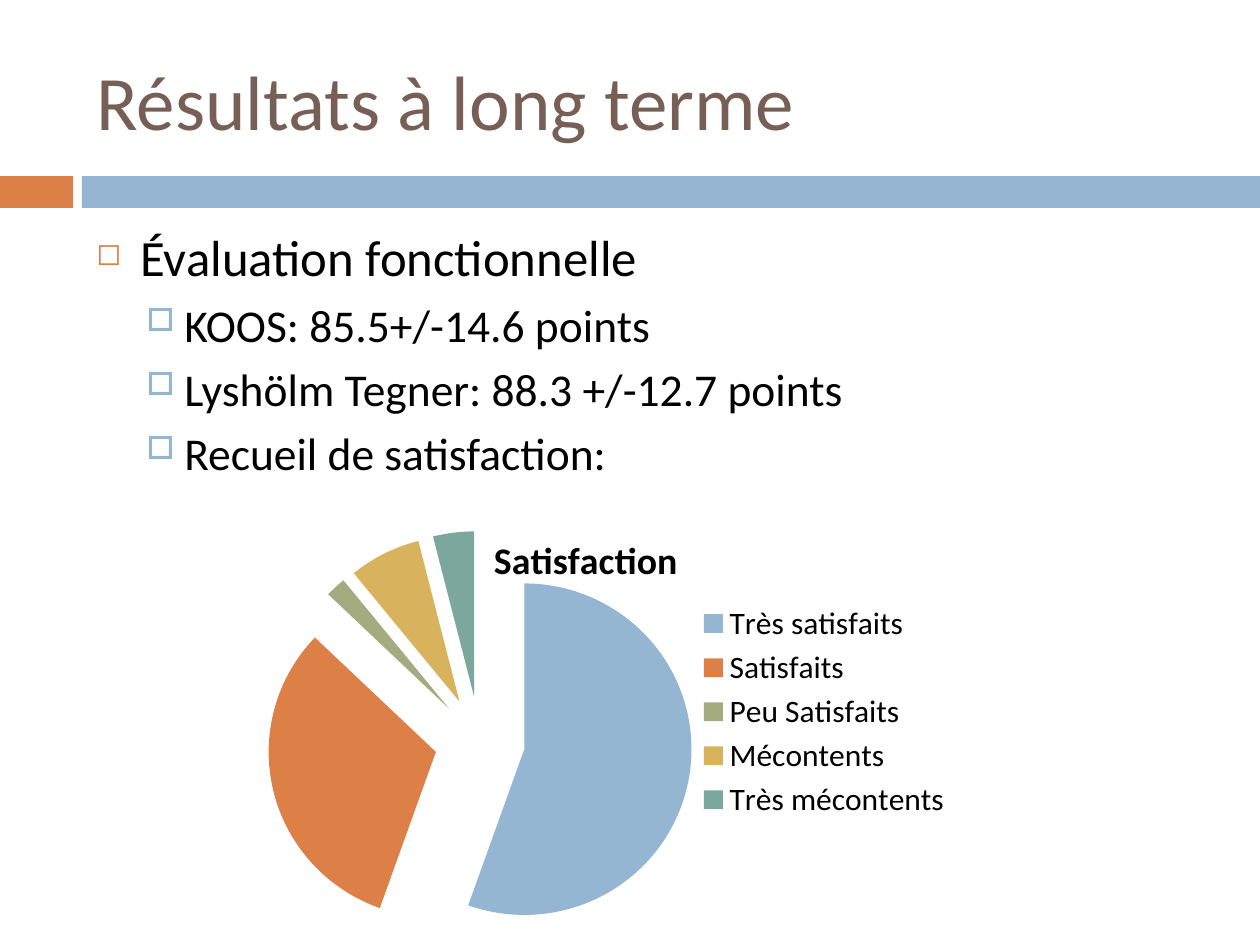
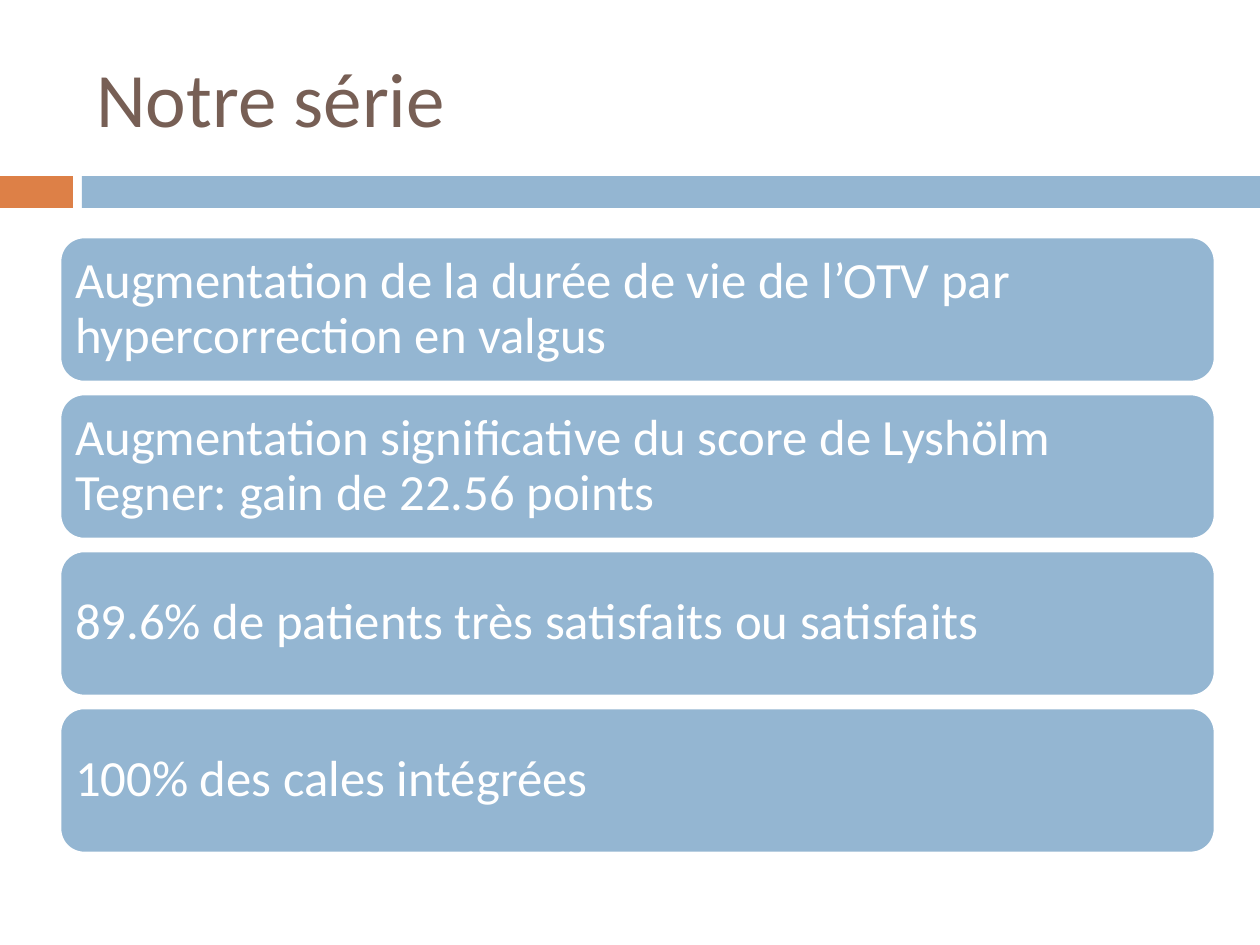
from lxml import etree
from pptx import Presentation, util as u
from pptx.chart.data import CategoryChartData
from pptx.dml.color import RGBColor
from pptx.enum import chart as ch, shapes, text
from pptx.oxml.ns import nsdecls, qn
from pptx.oxml import parse_xml

BLUE = RGBColor(0x94, 0xB6, 0xD2)
ORANGE = RGBColor(0xDD, 0x80, 0x47)
GREEN = RGBColor(0xA5, 0xAB, 0x81)
GOLD = RGBColor(0xD8, 0xB2, 0x5C)
TEAL = RGBColor(0x7B, 0xA7, 0x9D)
BROWN = RGBColor(0x77, 0x5F, 0x55)
BLACK = RGBColor(0, 0, 0)
WHITE = RGBColor(255, 255, 255)
FONT = "Calibri"

RESULTS_TITLE = "Résultats à long terme"
RESULTS = [  # (level, text)
    (0, "Évaluation fonctionnelle"),
    (1, "KOOS: 85.5+/-14.6 points"),
    (1, "Lyshölm Tegner: 88.3 +/-12.7 points"),
    (1, "Recueil de satisfaction:"),
]
LEVELS = [  # one format per outline level, indents in px
    dict(size=29, before=7, bullet=("◻", ORANGE, 60, 44, 44)),
    dict(size=26, before=5.5, bullet=("□", BLUE, 70, 88, 38)),
]
CHART_TITLE = "Satisfaction"
SATISFACTION = [  # (category, value, colour)
    ("Très satisfaits", 56, BLUE),
    ("Satisfaits", 32, ORANGE),
    ("Peu Satisfaits", 2, GREEN),
    ("Mécontents", 7, GOLD),
    ("Très mécontents", 4, TEAL),
]
EXPLOSION = 27
PLOT_AREA = dict(x=0.03, y=0.16, w=0.66, h=0.83)

SERIES_TITLE = "Notre série"
FINDINGS = [
    "Augmentation de la durée de vie de l’OTV par hypercorrection en valgus",
    "Augmentation significative du score de Lyshölm Tegner: gain de 22.56 points",
    "89.6% de patients très satisfaits ou satisfaits",
    "100% des cales intégrées",
]


def px(n):
    return u.Emu(round(n * 914400 / 126))


def box(*at):
    return [px(n) for n in at]


def write(p, words, size, color, level=0, before=None, spacing=None, bullet=None):
    p.level = level
    p.alignment = text.PP_ALIGN.LEFT
    if spacing:
        p.line_spacing = spacing
    if before:
        p.space_before = u.Pt(before)
    if bullet:
        char, bullet_color, percent, margin, hang = bullet
        pPr = p._p.get_or_add_pPr()
        pPr.set("marL", str(px(margin)))
        pPr.set("indent", str(-px(hang)))
        clr = etree.SubElement(pPr, qn("a:buClr"))
        etree.SubElement(clr, qn("a:srgbClr"), val=str(bullet_color))
        etree.SubElement(pPr, qn("a:buSzPct"), val=str(percent * 1000))
        etree.SubElement(pPr, qn("a:buChar"), char=char)
    r = p.add_run()
    r.text = words
    r.font.name, r.font.size, r.font.color.rgb = FONT, u.Pt(size), color


def add_box(s, kind, at, fill, line=None):
    sp = s.shapes.add_shape(kind, *box(*at))
    sp.shadow.inherit = False
    sp.fill.solid()
    sp.fill.fore_color.rgb = fill
    if line:
        sp.line.color.rgb, sp.line.width = line, u.Pt(1.5)
    else:
        sp.line.fill.background()
    return sp


def add_text_box(s, at, anchor):
    tf = s.shapes.add_textbox(*box(*at)).text_frame
    tf.word_wrap = True
    tf.vertical_anchor = anchor
    return tf


def new_slide(prs, title, title_top):
    """Add a slide with the shared two-part band and title."""
    s = prs.slides.add_slide(prs.slide_layouts[6])
    for left, width, color in ((0, 73, ORANGE), (82, 1178, BLUE)):
        add_box(s, shapes.MSO_SHAPE.RECTANGLE, (left, 176, width, 32), color)
    tf = add_text_box(s, (84, title_top, 1124, 136), text.MSO_ANCHOR.MIDDLE)
    write(tf.paragraphs[0], title, 44, BROWN)
    return s


def set_font(font, size, bold=False):
    font.name, font.size, font.bold = FONT, u.Pt(size), bold
    font.color.rgb = BLACK


def add_satisfaction_pie(s):
    data = CategoryChartData()
    data.categories = [name for name, _, _ in SATISFACTION]
    data.add_series(CHART_TITLE, [value for _, value, _ in SATISFACTION])
    chart = s.shapes.add_chart(ch.XL_CHART_TYPE.PIE, *box(207, 512, 758, 403), data).chart
    set_font(chart.font, 18)

    chart.has_title = True
    tf = chart.chart_title.text_frame
    tf.text = CHART_TITLE
    set_font(tf.paragraphs[0].runs[0].font, 21.6, bold=True)

    chart.has_legend = True
    chart.legend.position = ch.XL_LEGEND_POSITION.RIGHT
    chart.legend.include_in_layout = False
    set_font(chart.legend.font, 18)

    plot = chart.plots[0]
    plot.vary_by_categories = True
    series = plot.series[0]
    for i, (_, _, color) in enumerate(SATISFACTION):
        fill = series.points[i].format.fill
        fill.solid()
        fill.fore_color.rgb = color
    for point in series._element.findall(qn("c:dPt")):
        explosion = parse_xml(f'<c:explosion {nsdecls("c")} val="{EXPLOSION}"/>')
        point.find(qn("c:spPr")).addprevious(explosion)

    area = chart._chartSpace.find(".//" + qn("c:plotArea"))
    for old in area.findall(qn("c:layout")):
        area.remove(old)
    modes = '<c:layoutTarget val="inner"/><c:xMode val="edge"/><c:yMode val="edge"/>'
    sizes = "".join(f'<c:{k} val="{v}"/>' for k, v in PLOT_AREA.items())
    area.insert(0, parse_xml(
        f'<c:layout {nsdecls("c")}><c:manualLayout>{modes}{sizes}</c:manualLayout></c:layout>'))


def build_results(prs):
    s = new_slide(prs, RESULTS_TITLE, 32)
    tf = add_text_box(s, (84, 220, 1124, 620), text.MSO_ANCHOR.TOP)
    for i, (level, words) in enumerate(RESULTS):
        p = tf.add_paragraph() if i else tf.paragraphs[0]
        write(p, words, color=BLACK, level=level, **LEVELS[level])
    add_satisfaction_pie(s)


def build_series(prs):
    s = new_slide(prs, SERIES_TITLE, 29)
    top, height, gap = 237, 145, 12
    for i, finding in enumerate(FINDINGS):
        at = (60, top + i * (height + gap), 1155, height)
        sp = add_box(s, shapes.MSO_SHAPE.ROUNDED_RECTANGLE, at, BLUE, line=WHITE)
        tf = sp.text_frame
        tf.word_wrap = True
        tf.vertical_anchor = text.MSO_ANCHOR.MIDDLE
        # The preset's text area is already inset by the rounded corners.
        tf.margin_left = tf.margin_right = tf.margin_top = tf.margin_bottom = px(8)
        write(tf.paragraphs[0], finding, 29, WHITE, spacing=0.9)


def main():
    prs = Presentation()
    prs.slide_width, prs.slide_height = box(1260, 945)
    build_results(prs)
    build_series(prs)
    prs.save("out.pptx")


if __name__ == "__main__":
    main()
